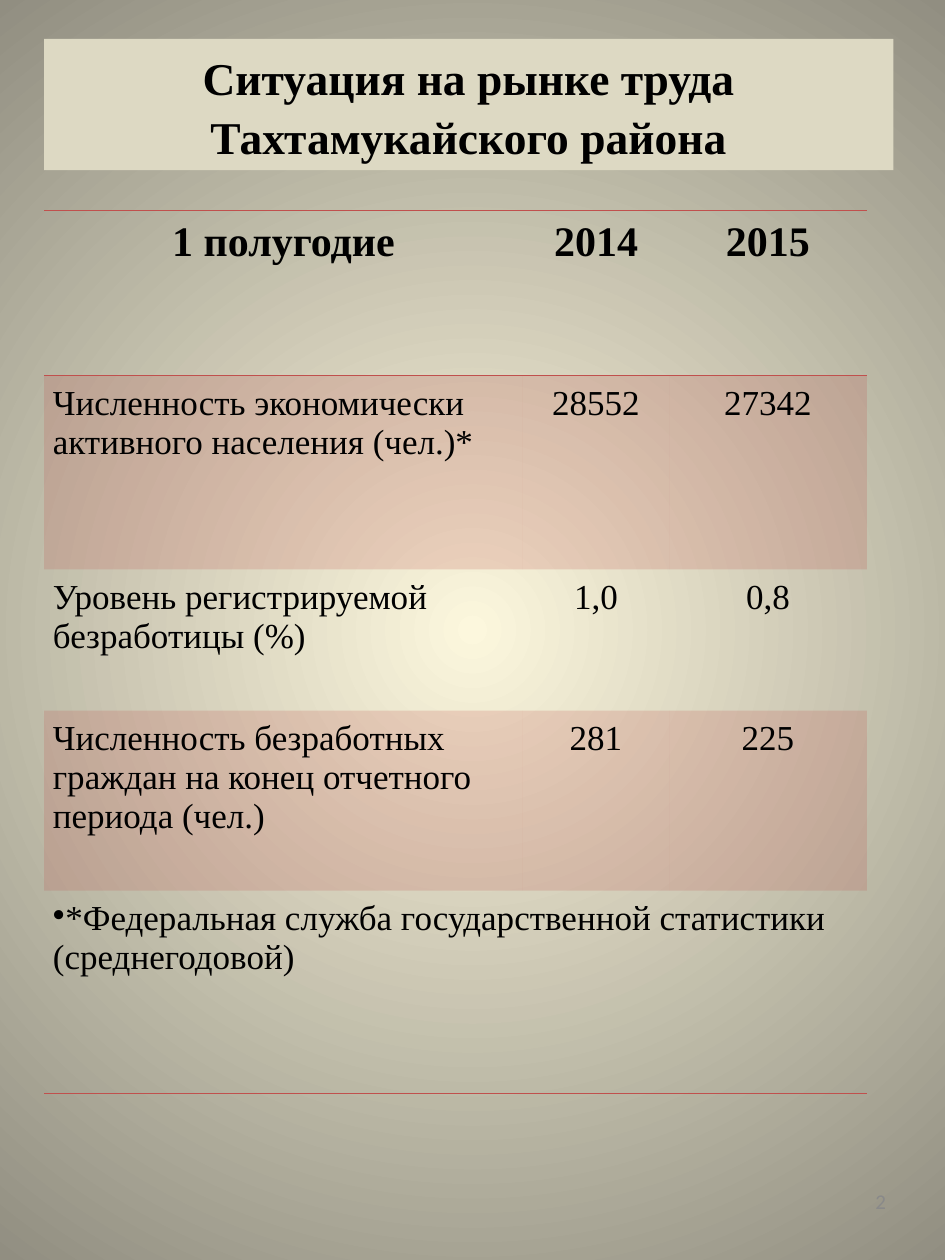
import pptx
import pptx.util
import pptx.dml.color
import pptx.enum.shapes
import pptx.enum.text
import pptx.oxml
import pptx.oxml.ns

WIDE, HIGH = 7.5, 10
LEFT = 0.35
COLS = [3.8, 1.16, 1.57]
ROWS = [1.31, 1.54, 1.12, 1.43, 1.61]
RED, BLACK = "C0504D", "000000"
PLAIN = "{2D5ABB26-0587-4C30-8999-92F81FD0307C}"
SERIF = "Times New Roman"
HEAD = {"name": SERIF, "size": pptx.util.Pt(24), "bold": True}
BODY = {"name": SERIF, "size": pptx.util.Pt(20), "bold": False}
TITLE = {"name": SERIF, "size": pptx.util.Pt(26), "bold": True}
PAGE = {"name": "Calibri", "size": pptx.util.Pt(12)}
MID = pptx.enum.text.PP_ALIGN.CENTER
START = pptx.enum.text.PP_ALIGN.LEFT
END = pptx.enum.text.PP_ALIGN.RIGHT
DATA = [
    ["1 полугодие", "2014", "2015"],
    ["Численность экономически активного населения (чел.)*", "28552", "27342"],
    ["Уровень регистрируемой безработицы (%)", "1,0", "0,8"],
    ["Численность безработных граждан на конец отчетного периода (чел.)",
     "281", "225"],
]
NOTE = "*Федеральная служба государственной статистики (среднегодовой)"


def tint(hue):
    return pptx.dml.color.RGBColor.from_string(hue)


def node(xml):
    """Parse an XML fragment whose root uses the a: prefix."""
    head, rest = xml.split(" ", 1)
    return pptx.oxml.parse_xml(f'{head} {pptx.oxml.ns.nsdecls("a")} {rest}')


def find(item, tag):
    return item.find(".//" + pptx.oxml.ns.qn(tag))


def write(frame, text, form, align, hue=BLACK, bullet=False):
    frame.word_wrap = True
    para = frame.paragraphs[0]
    para.text = text
    para.alignment = align
    if bullet:
        para._p.get_or_add_pPr().append(node('<a:buChar char="•"/>'))
    font = para.runs[0].font
    for key, value in form.items():
        setattr(font, key, value)
    font.color.rgb = tint(hue)
    return para


def paint(slide):
    """Give the slide a round gradient, light in the centre."""
    fill = slide.background.fill
    fill.gradient()
    for stop, hue in zip(fill.gradient_stops, ["FCF7DD", "918E81"]):
        stop.color.rgb = tint(hue)
    grad = find(slide.element, "a:gradFill")
    grad.replace(find(grad, "a:lin"), node(
        '<a:path path="circle"><a:fillToRect l="50000" t="50000" '
        'r="50000" b="50000"/></a:path>'))


def banner(slide, text):
    box = slide.shapes.add_shape(
        pptx.enum.shapes.MSO_SHAPE.RECTANGLE,
        *map(pptx.util.Inches, (LEFT, 0.31, 6.74, 1.04)))
    box.shadow.inherit = False
    box.fill.solid()
    box.fill.fore_color.rgb = tint("DDD9C3")
    box.line.fill.background()
    box.text_frame.vertical_anchor = pptx.enum.text.MSO_ANCHOR.MIDDLE
    write(box.text_frame, text, TITLE, MID).line_spacing = 1.09


def style(cell, row):
    """Set a cell's margins, rules and band."""
    for side in ("left", "right", "top", "bottom"):
        setattr(cell, "margin_" + side, pptx.util.Inches(0.07))
    last = len(ROWS) - 1
    edges = {0: ("lnT", "lnB"), last: ("lnB",)}.get(row, ())
    for edge in edges:
        cell._tc.get_or_add_tcPr().append(node(
            f'<a:{edge} w="12700"><a:solidFill><a:srgbClr val="{RED}"/>'
            f'</a:solidFill></a:{edge}>'))
    if row % 2:
        cell.fill.solid()
        cell.fill.fore_color.rgb = tint(RED)
        find(cell._tc.tcPr, "a:srgbClr").append(node('<a:alpha val="20000"/>'))
    else:
        cell.fill.background()


def grid(slide):
    frame = slide.shapes.add_table(
        len(ROWS), len(COLS),
        *map(pptx.util.Inches, (LEFT, 1.67, sum(COLS), sum(ROWS))))
    find(frame.element, "a:tableStyleId").text = PLAIN
    table = frame.table
    table.first_row = table.horz_banding = False
    for col, width in zip(table.columns, COLS):
        col.width = pptx.util.Inches(width)
    for row, height in enumerate(ROWS):
        table.rows[row].height = pptx.util.Inches(height)
        for col in range(len(COLS)):
            style(table.cell(row, col), row)
    for row, line in enumerate(DATA):
        for col, text in enumerate(line):
            align = START if row and not col else MID
            write(table.cell(row, col).text_frame, text,
                  BODY if row else HEAD, align)
    foot = table.cell(len(DATA), 0)
    foot.merge(table.cell(len(DATA), len(COLS) - 1))
    write(foot.text_frame, NOTE, BODY, START, bullet=True)


def number(slide, text):
    box = slide.shapes.add_textbox(
        *map(pptx.util.Inches, (5.38, 9.27, 1.75, 0.53)))
    box.text_frame.vertical_anchor = pptx.enum.text.MSO_ANCHOR.MIDDLE
    write(box.text_frame, text, PAGE, END, "898989")


def main():
    deck = pptx.Presentation()
    deck.slide_width = pptx.util.Inches(WIDE)
    deck.slide_height = pptx.util.Inches(HIGH)
    slide = deck.slides.add_slide(deck.slide_layouts[6])
    paint(slide)
    banner(slide, "Ситуация на рынке труда Тахтамукайского района")
    grid(slide)
    number(slide, "2")
    deck.save("out.pptx")


if __name__ == "__main__":
    main()
